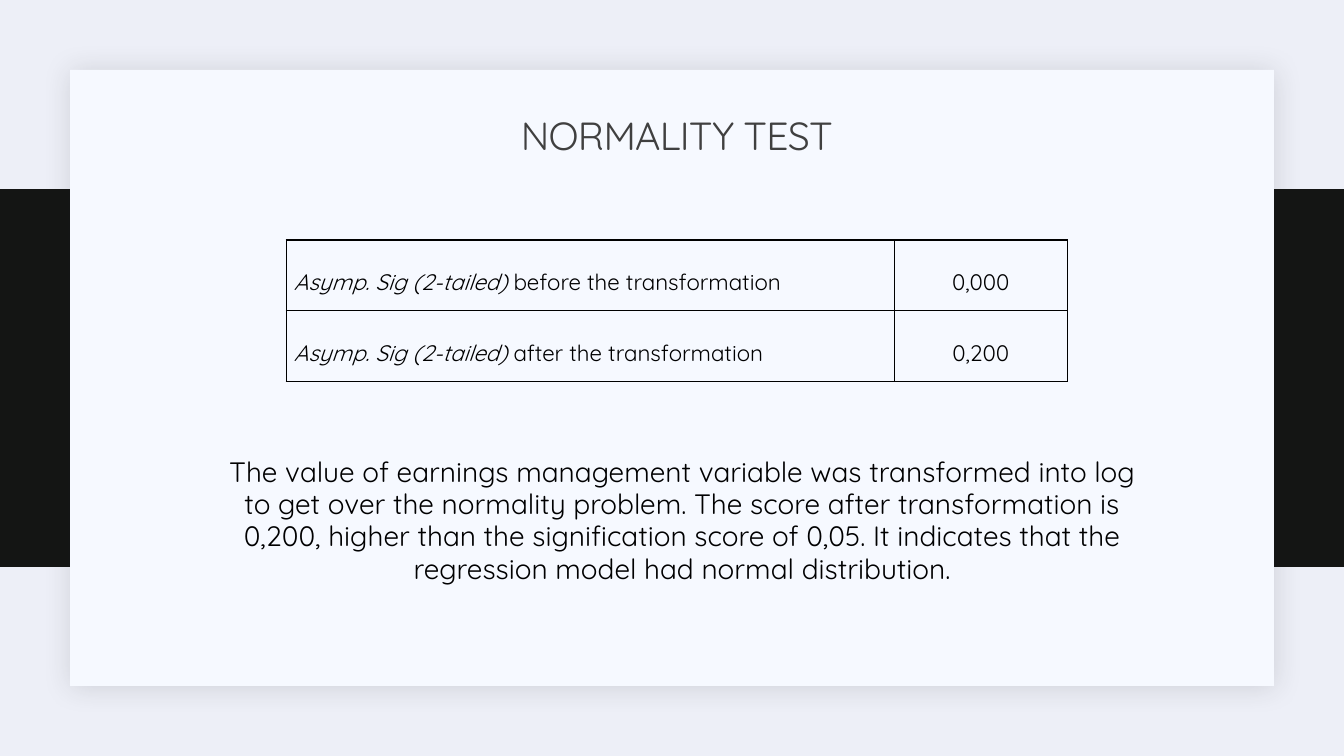
from lxml.etree import SubElement
from pptx import Presentation
from pptx.dml.color import RGBColor
from pptx.enum.shapes import MSO_SHAPE as Shape
from pptx.enum.text import MSO_ANCHOR as Anchor, PP_ALIGN as Align
from pptx.oxml import parse_xml
from pptx.oxml.ns import nsdecls, qn
from pptx.util import Pt

WIDTH, HEIGHT = 960, 540


def color(value):
    return RGBColor.from_string(value)


def write(frame, text, size=16, ink="000000", align=Align.CENTER,
          line_spacing=1.0, tracking=0, italic_lead=""):
    paragraph = frame.paragraphs[0]
    paragraph.alignment = align
    paragraph.line_spacing = line_spacing
    for part, italic in ((italic_lead, True), (text, False)):
        if not part:
            continue
        run = paragraph.add_run()
        run.text = part
        run.font.name = "Quicksand"
        run.font.size = Pt(size)
        run.font.italic = italic
        run.font.color.rgb = color(ink)
        if tracking:
            run.font._element.set("spc", str(round(tracking * 100)))


class SlideBuilder:
    def __init__(self, presentation, background):
        self.slide = presentation.slides.add_slide(presentation.slide_layouts[6])
        self.slide.background.fill.solid()
        self.slide.background.fill.fore_color.rgb = color(background)

    def rectangle(self, left, top, width, height, fill):
        shape = self.slide.shapes.add_shape(
            Shape.RECTANGLE, Pt(left), Pt(top), Pt(width), Pt(height))
        shape.fill.solid()
        shape.fill.fore_color.rgb = color(fill)
        shape.line.fill.background()
        shape.shadow.inherit = False
        return shape

    def soft_shadow(self, shape, ink, opacity, blur, distance, angle):
        effects = shape._element.spPr.find(qn("a:effectLst"))
        shadow = SubElement(
            effects, qn("a:outerShdw"), blurRad=str(Pt(blur)),
            dist=str(Pt(distance)), dir=str(angle * 60000),
            algn="ctr", rotWithShape="0")
        tint = SubElement(shadow, qn("a:srgbClr"), val=ink)
        SubElement(tint, qn("a:alpha"), val=str(opacity * 1000))

    def text(self, left, top, width, height, text, anchor=Anchor.TOP,
             side_margins=(7.2, 7.2), **style):
        box = self.slide.shapes.add_textbox(
            Pt(left), Pt(top), Pt(width), Pt(height))
        frame = box.text_frame
        frame.word_wrap = True
        frame.vertical_anchor = anchor
        frame.margin_left, frame.margin_right = map(Pt, side_margins)
        write(frame, text, **style)

    def border(self, cell, ink, width):
        properties = cell._tc.get_or_add_tcPr()
        for position, side in enumerate(("lnL", "lnR", "lnT", "lnB")):
            properties.insert(position, parse_xml(
                f'<a:{side} {nsdecls("a")} w="{Pt(width)}"><a:solidFill>'
                f'<a:srgbClr val="{ink}"/></a:solidFill></a:{side}>'))

    def table(self, left, top, column_widths, row_height, rows, lead):
        table = self.slide.shapes.add_table(
            len(rows), len(column_widths), Pt(left), Pt(top),
            Pt(sum(column_widths)), Pt(row_height * len(rows))).table
        table.first_row = table.horz_banding = False
        for column, width in zip(table.columns, column_widths):
            column.width = Pt(width)
        for row_index, values in enumerate(rows):
            table.rows[row_index].height = Pt(row_height)
            for column_index, value in enumerate(values):
                cell = table.cell(row_index, column_index)
                cell.fill.background()
                cell.vertical_anchor = Anchor.MIDDLE
                cell.margin_left = cell.margin_right = Pt(5.4)
                cell.margin_top = cell.margin_bottom = 0
                is_label = column_index == 0
                write(cell.text_frame, value, line_spacing=1.5,
                      align=Align.JUSTIFY if is_label else Align.CENTER,
                      italic_lead=lead if is_label else "")
                self.border(cell, "000000", 1)


def main():
    presentation = Presentation()
    presentation.slide_width, presentation.slide_height = Pt(WIDTH), Pt(HEIGHT)
    builder = SlideBuilder(presentation, "EDEFF7")

    builder.rectangle(0, HEIGHT / 4, WIDTH, HEIGHT / 2, "141514")
    card = builder.rectangle(50, 50, WIDTH - 100, HEIGHT - 100, "F6F9FF")
    builder.soft_shadow(card, "1F2125", opacity=15, blur=20, distance=2, angle=45)

    builder.text(328.3, 75.6, 310.3, 46, "NORMALITY TEST", anchor=Anchor.MIDDLE,
                 size=28, ink="404040", line_spacing=0.9, tracking=-0.5)
    builder.text(
        154, 322.6, 659.5, 143.3,
        "The value of earnings management variable was transformed into log "
        "to get over the normality problem. The score after transformation is "
        "0,200, higher than the signification score of 0,05. It indicates that "
        "the regression model had normal distribution.",
        side_margins=(7.2, 0), size=20, line_spacing=0.96)
    builder.table(
        204.5, 171.4, (434.4, 123.4), 50.4,
        (("before the transformation", "0,000"),
         ("after the transformation", "0,200")),
        lead="Asymp. Sig (2-tailed) ")

    presentation.save("out.pptx")


if __name__ == "__main__":
    main()
